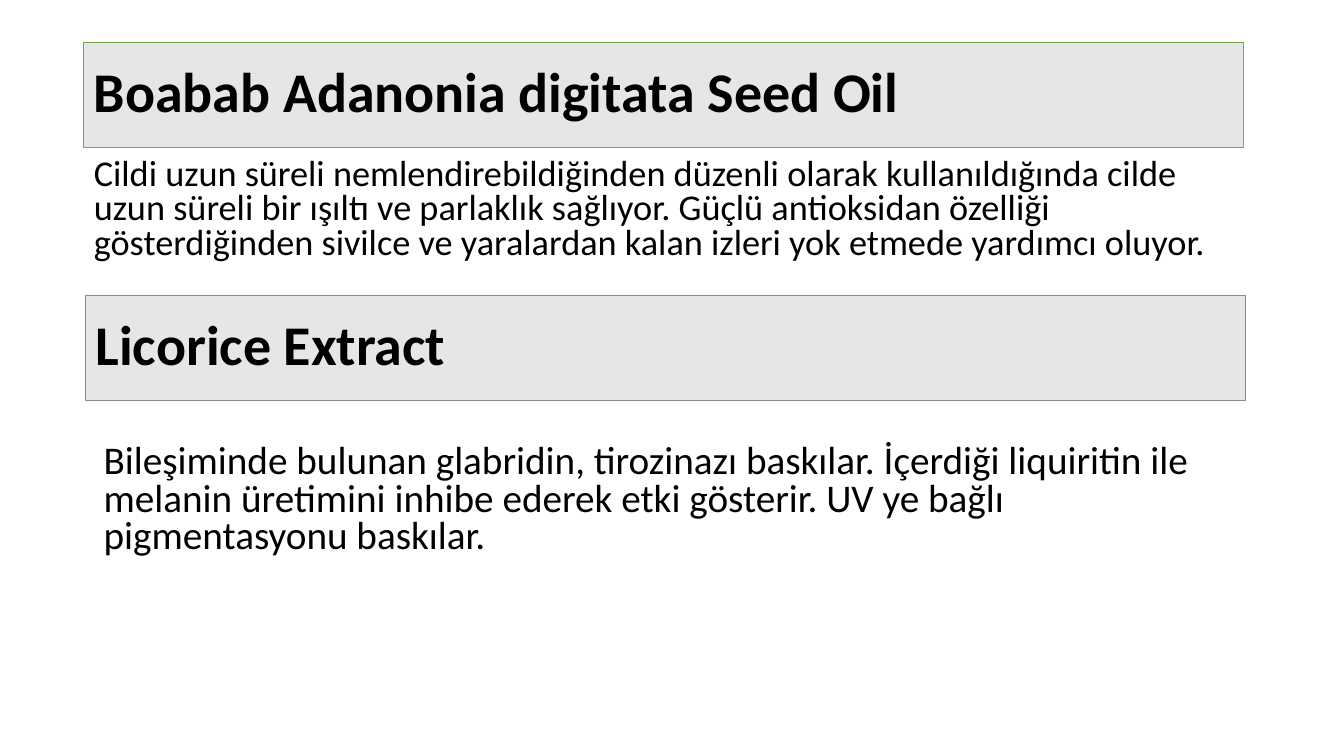
from dataclasses import dataclass

from pptx import Presentation
from pptx.dml.color import RGBColor
from pptx.enum.shapes import MSO_SHAPE
from pptx.enum.text import MSO_ANCHOR, MSO_AUTO_SIZE, PP_ALIGN
from pptx.shapes.autoshape import Shape
from pptx.text.text import _Paragraph as Paragraph
from pptx.util import Inches, Pt

SLIDE_WIDTH, SLIDE_HEIGHT = Inches(13.33), Inches(7.5)
TITLE_AND_CONTENT = 1


@dataclass(frozen=True)
class Theme:
    font: str = "Calibri"
    text: RGBColor = RGBColor(0x00, 0x00, 0x00)
    banner: RGBColor = RGBColor(0xE7, 0xE6, 0xE6)
    green: RGBColor = RGBColor(0x70, 0xAD, 0x47)
    gray: RGBColor = RGBColor(0x8C, 0x8C, 0x8C)
    heading_size: float = 40
    first_body_size: float = 25.9
    second_body_size: float = 28


@dataclass(frozen=True)
class Frame:
    """A block whose left and top are shares of the slide's size."""
    left: float
    top: float
    height: float
    width: float = 11.5 / 13.33

    def place(self, shape: Shape) -> None:
        shape.left, shape.width = (round(SLIDE_WIDTH * share) for share in (self.left, self.width))
        shape.top, shape.height = (round(SLIDE_HEIGHT * share) for share in (self.top, self.height))


@dataclass(frozen=True)
class Ingredient:
    name: str
    effect: str
    heading: Frame
    body: Frame
    outline: RGBColor
    body_size: float


THEME = Theme()
HEADING_HEIGHT = 1.04 / 7.5
BODY_HEIGHT = 1.32 / 7.5

INGREDIENTS = (
    Ingredient(
        "Boabab Adanonia digitata Seed Oil",
        "Cildi uzun süreli nemlendirebildiğinden düzenli olarak kullanıldığında cilde "
        "uzun süreli bir ışıltı ve parlaklık sağlıyor. Güçlü antioksidan özelliği "
        "gösterdiğinden sivilce ve yaralardan kalan izleri yok etmede yardımcı oluyor.",
        Frame(0.83 / 13.33, 0.42 / 7.5, HEADING_HEIGHT),
        Frame(0.83 / 13.33, 1.52 / 7.5, BODY_HEIGHT),
        THEME.green,
        THEME.first_body_size,
    ),
    Ingredient(
        "Licorice Extract",
        "Bileşiminde bulunan glabridin, tirozinazı baskılar. İçerdiği liquiritin ile "
        "melanin üretimini inhibe ederek etki gösterir. UV ye bağlı pigmentasyonu baskılar.",
        Frame(0.85 / 13.33, 2.93 / 7.5, HEADING_HEIGHT),
        Frame(0.93 / 13.33, 4.36 / 7.5, BODY_HEIGHT),
        THEME.gray,
        THEME.second_body_size,
    ),
)


def write_text(shape: Shape, text: str, size: float, anchor: MSO_ANCHOR) -> Paragraph:
    frame = shape.text_frame
    frame.text = text
    frame.word_wrap = True
    frame.auto_size = MSO_AUTO_SIZE.NONE
    frame.vertical_anchor = anchor
    paragraph = frame.paragraphs[0]
    paragraph.alignment = PP_ALIGN.LEFT
    paragraph.font.name = THEME.font
    paragraph.font.size = Pt(size)
    paragraph.font.color.rgb = THEME.text
    return paragraph


def format_heading(shape: Shape, ingredient: Ingredient) -> None:
    ingredient.heading.place(shape)
    shape.shadow.inherit = False
    shape.fill.solid()
    shape.fill.fore_color.rgb = THEME.banner
    shape.line.color.rgb = ingredient.outline
    shape.line.width = Pt(0.5)
    paragraph = write_text(shape, ingredient.name, THEME.heading_size, MSO_ANCHOR.MIDDLE)
    paragraph.line_spacing = 0.9
    paragraph.font.bold = True


def format_body(shape: Shape, ingredient: Ingredient) -> None:
    ingredient.body.place(shape)
    paragraph = write_text(shape, ingredient.effect, ingredient.body_size, MSO_ANCHOR.TOP)
    paragraph.line_spacing = 0.8
    paragraph.space_before = Pt(10)
    properties = paragraph._p.get_or_add_pPr()
    properties.set("marL", "0")
    properties.set("indent", "0")
    properties.insert_element_before(
        properties.makeelement("{http://schemas.openxmlformats.org/drawingml/2006/main}buNone"),
        "a:tabLst", "a:defRPr", "a:extLst",
    )


def main() -> None:
    presentation = Presentation()
    presentation.slide_width, presentation.slide_height = SLIDE_WIDTH, SLIDE_HEIGHT
    slide = presentation.slides.add_slide(presentation.slide_layouts[TITLE_AND_CONTENT])
    shapes = slide.shapes
    blocks = (
        (shapes.title, slide.placeholders[1]),
        (shapes.add_shape(MSO_SHAPE.RECTANGLE, 0, 0, 0, 0), shapes.add_textbox(0, 0, 0, 0)),
    )
    for ingredient, (heading, body) in zip(INGREDIENTS, blocks):
        format_heading(heading, ingredient)
        format_body(body, ingredient)
    presentation.save("out.pptx")


if __name__ == "__main__":
    main()
